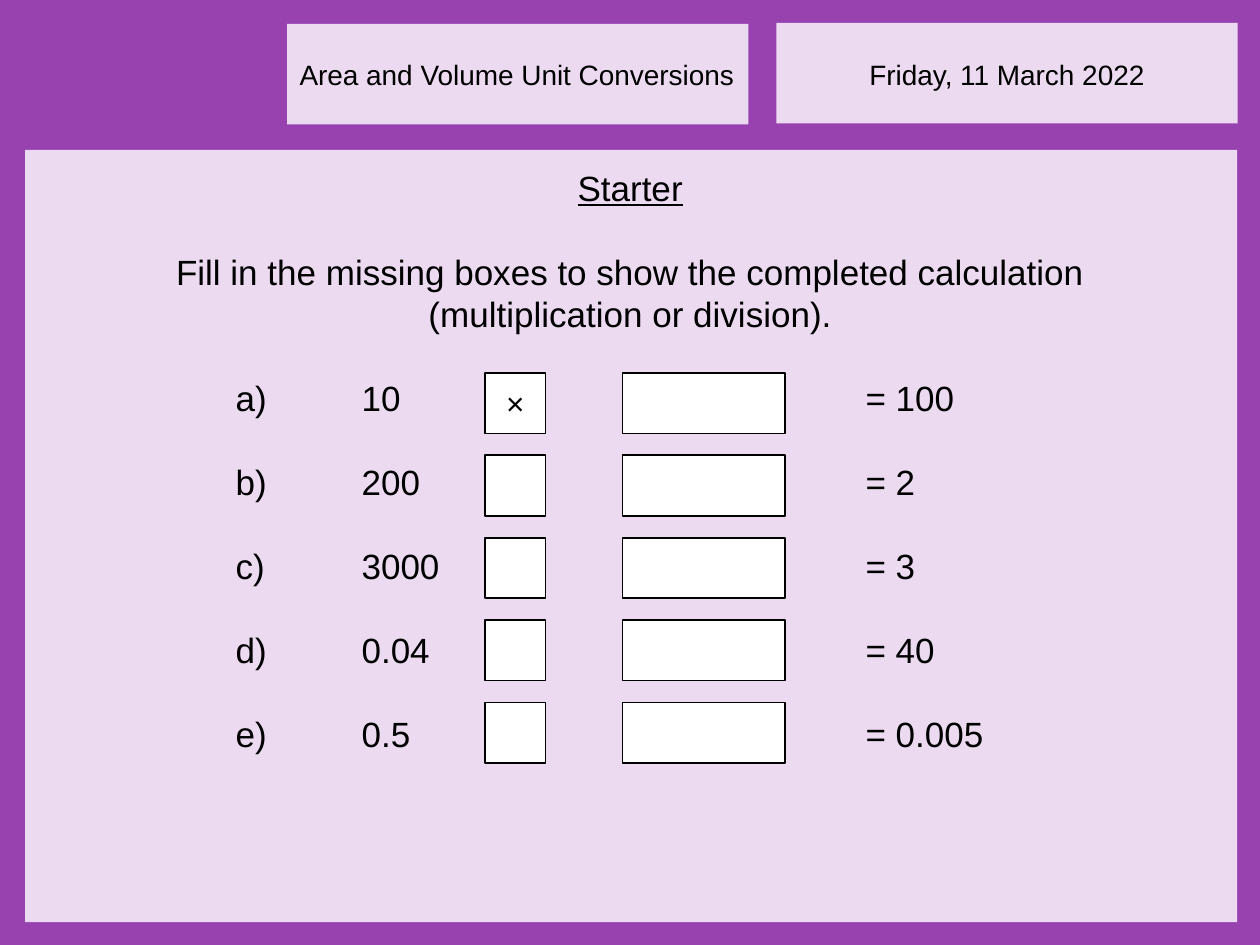
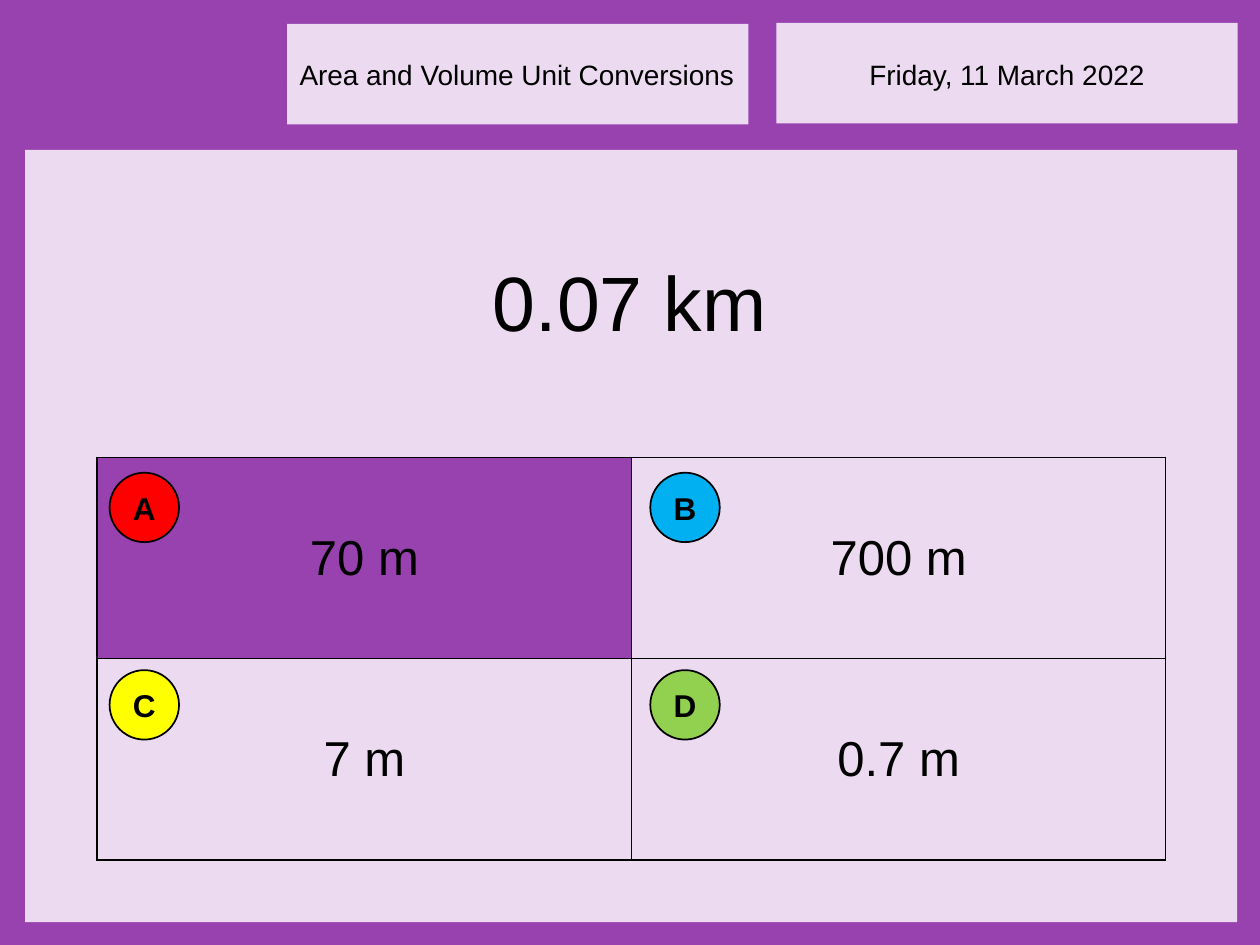
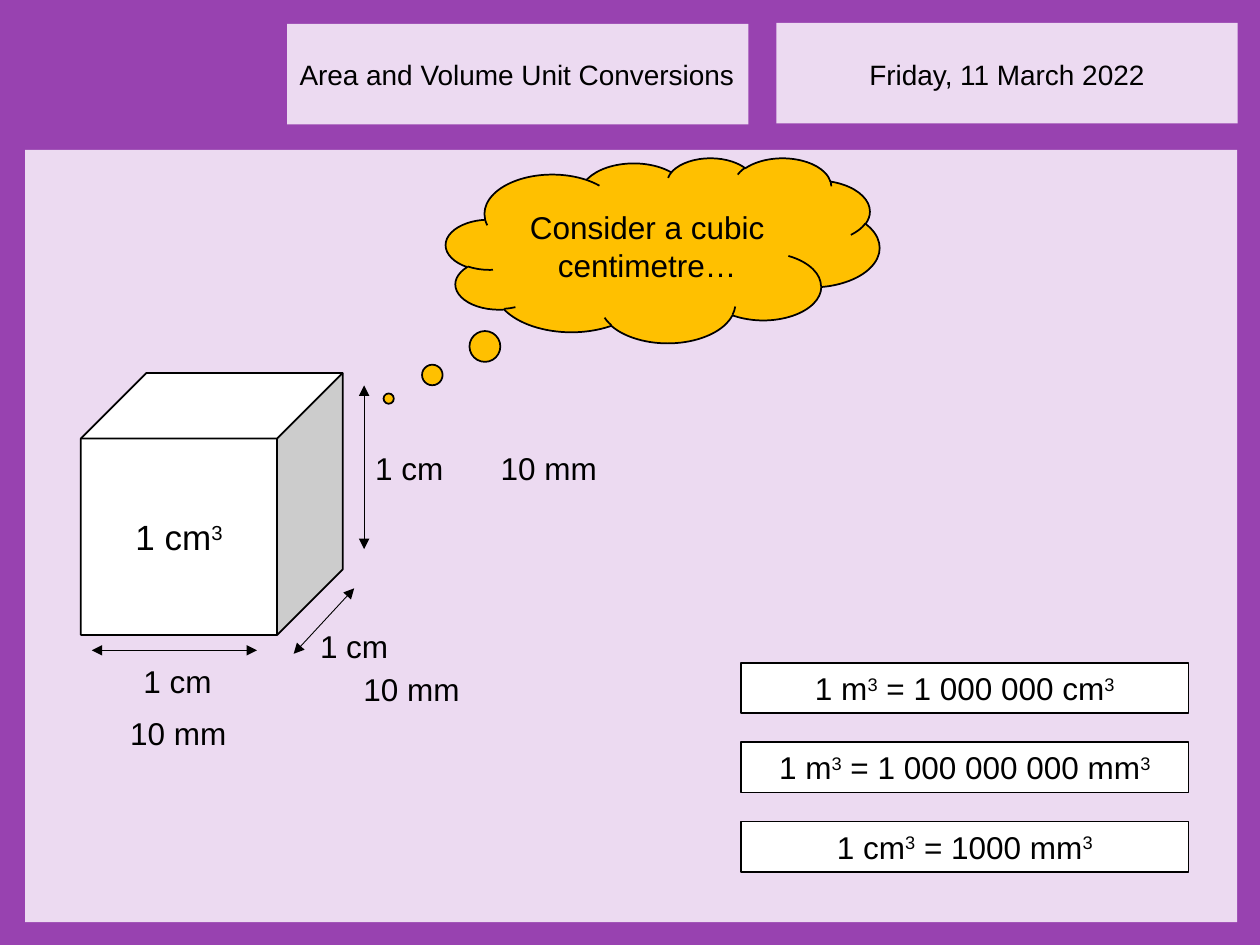
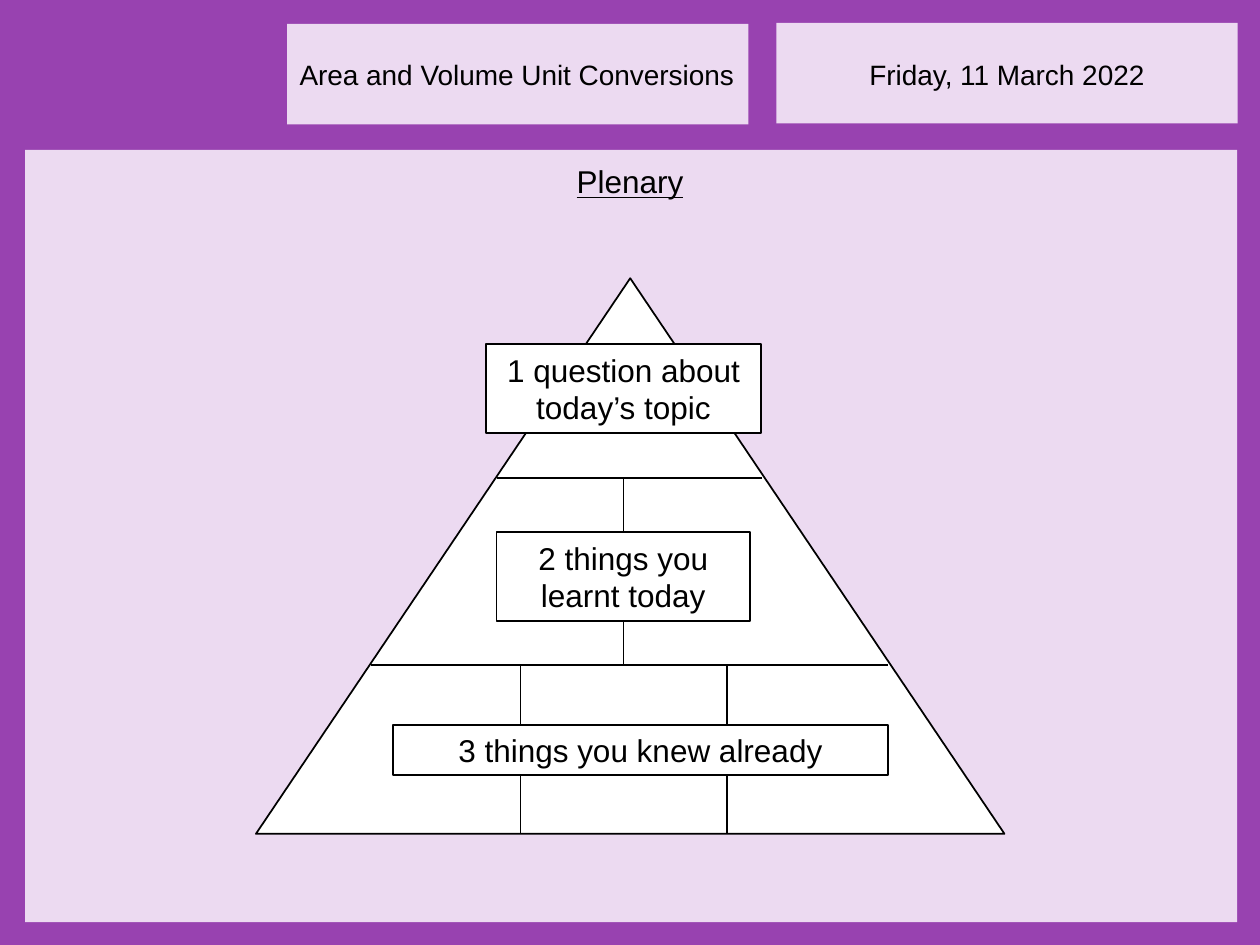
from lxml import etree
from pptx import Presentation
from pptx.dml.color import RGBColor
from pptx.enum.shapes import MSO_CONNECTOR, MSO_SHAPE
from pptx.enum.text import MSO_ANCHOR, PP_ALIGN
from pptx.oxml.ns import qn
from pptx.util import Cm, Pt

RECT, OVAL, CUBE = MSO_SHAPE.RECTANGLE, MSO_SHAPE.OVAL, MSO_SHAPE.CUBE
CLOUD, TRIANGLE = MSO_SHAPE.CLOUD_CALLOUT, MSO_SHAPE.ISOSCELES_TRIANGLE
STRAIGHT = MSO_CONNECTOR.STRAIGHT
MIDDLE = MSO_ANCHOR.MIDDLE
LEFT, CENTER = PP_ALIGN.LEFT, PP_ALIGN.CENTER

PURPLE = RGBColor(0x98, 0x42, 0xB0)
LILAC = RGBColor(0xEC, 0xDA, 0xF1)
BLACK = RGBColor(0x00, 0x00, 0x00)
WHITE = RGBColor(0xFF, 0xFF, 0xFF)
RED = RGBColor(0xFF, 0x00, 0x00)
BLUE = RGBColor(0x00, 0xB0, 0xF0)
YELLOW = RGBColor(0xFF, 0xFF, 0x00)
GREEN = RGBColor(0x92, 0xD0, 0x50)
AMBER = RGBColor(0xFF, 0xC0, 0x00)
FONT = "Arial"


def write(p, text, size=18, bold=False, underline=False, align=CENTER, before=0):
    """Fill a paragraph; the character after each ^ is superscript."""
    p.alignment = align
    if before:
        p.space_before = Pt(before)
    first, *rest = text.split("^")
    pieces = [(first, False)]
    for part in rest:
        pieces += [(part[0], True), (part[1:], False)]
    for piece, raised in pieces:
        if not piece:
            continue
        r = p.add_run()
        r.text = piece
        r.font.name, r.font.size = FONT, Pt(size)
        r.font.bold, r.font.underline = bold, underline
        r.font.color.rgb = BLACK
        if raised:
            r._r.get_or_add_rPr().set("baseline", "30000")


def add_box(shapes, x, y, w, h, text="", kind=None, fill=WHITE, outline=True, **fmt):
    """Add a preset shape, or a plain text box when no kind is given; lengths in cm."""
    place = Cm(x), Cm(y), Cm(w), Cm(h)
    if kind is None:
        sp = shapes.add_textbox(*place)
    else:
        sp = shapes.add_shape(kind, *place)
        sp.shadow.inherit = False
        sp.fill.solid()
        sp.fill.fore_color.rgb = fill
        if outline:
            sp.line.color.rgb = BLACK
            sp.line.width = Pt(1)
        else:
            sp.line.fill.background()
        sp.text_frame.vertical_anchor = MIDDLE
    sp.text_frame.word_wrap = True
    if text:
        write(sp.text_frame.paragraphs[0], text, **fmt)
    return sp


prs = Presentation()
prs.slide_width, prs.slide_height = Cm(25.4), Cm(19.05)

# Frame shared by every slide
slides = []
for _ in range(4):
    s = prs.slides.add_slide(prs.slide_layouts[6])
    for x, y, w, h, fill in [
        (0, 0, 25.4, 19.05, PURPLE),
        (15.65, 0.46, 9.3, 2.03, LILAC),
        (5.79, 0.48, 9.3, 2.03, LILAC),
        (0.51, 3.02, 24.43, 15.57, LILAC),
    ]:
        add_box(s.shapes, x, y, w, h, kind=RECT, fill=fill, outline=False)
    add_box(s.shapes, 15.65, 1.04, 9.3, 0.94, "Friday, 11 March 2022", size=16)
    add_box(s.shapes, 5.77, 1.04, 9.3, 0.94, "Area and Volume Unit Conversions", size=16)
    slides.append(s)
starter, quiz, cubic, plenary = [s.shapes for s in slides]

# Starter: missing boxes
tf = add_box(starter, 3.23, 3.23, 18.95, 12.22, "Starter", size=20, underline=True).text_frame
write(tf.add_paragraph(), "Fill in the missing boxes to show the completed calculation",
      size=20, before=24)
write(tf.add_paragraph(), "(multiplication or division).", size=20)
sums = [("a", "10", "100"), ("b", "200", "2"), ("c", "3000", "3"),
        ("d", "0.04", "40"), ("e", "0.5", "0.005")]
for i, (letter, number, answer) in enumerate(sums):
    p = tf.add_paragraph()
    tabs = etree.SubElement(p._p.get_or_add_pPr(), qn("a:tabLst"))
    for stop in (1.27, 3.81, 13.97):
        etree.SubElement(tabs, qn("a:tab"), pos=str(Cm(stop)), algn="l")
    write(p, f"\t{letter})\t{number}\t= {answer}", size=20, align=LEFT, before=24)
    y = 7.52 + 1.66 * i
    add_box(starter, 9.78, y, 1.22, 1.22, "×" if i == 0 else "", kind=RECT)
    add_box(starter, 12.55, y, 3.28, 1.22, kind=RECT)

# Quiz: four answers, the right one filled
tbl = quiz.add_table(2, 2, Cm(1.96), Cm(9.22), Cm(21.54), Cm(8.12)).table
tbl.first_row = tbl.horz_banding = False
add_box(quiz, 3.2, 5, 19, 2.13, "0.07 km", size=44)
answers = [("A", "70 m", RED), ("B", "700 m", BLUE), ("C", "7 m", YELLOW), ("D", "0.7 m", GREEN)]
for i, (letter, answer, color) in enumerate(answers):
    row, col = divmod(i, 2)
    cell = tbl.cell(row, col)
    cell.vertical_anchor = MIDDLE
    write(cell.text_frame.paragraphs[0], answer, size=28)
    for side in ("lnL", "lnR", "lnT", "lnB"):
        ln = etree.SubElement(cell._tc.get_or_add_tcPr(), qn(f"a:{side}"), w=str(Pt(1)))
        solid = etree.SubElement(ln, qn("a:solidFill"))
        etree.SubElement(solid, qn("a:srgbClr"), val=str(BLACK))
    if letter == "A":
        cell.fill.solid()
        cell.fill.fore_color.rgb = PURPLE
    else:
        cell.fill.background()
    add_box(quiz, 2.21 + 10.9 * col, 9.53 + 3.98 * row, 1.4, 1.4, letter,
            kind=OVAL, fill=color, bold=True)

# Cubic centimetre
add_box(cubic, 1.63, 7.52, 5.28, 5.28, "1 cm^3", kind=CUBE, size=20)
for x, y in [(2.16, 13.23), (5.72, 12.52), (6.83, 8.92)]:
    add_box(cubic, x, y, 2.84, 1.02, "1 cm")
for x, y in [(1.83, 14.27), (6.53, 13.39), (9.3, 8.92)]:
    add_box(cubic, x, y, 3.53, 1.02, "10 mm")
facts = ["1 m^3 = 1 000 000 cm^3", "1 m^3 = 1 000 000 000 mm^3", "1 cm^3 = 1000 mm^3"]
for i, fact in enumerate(facts):
    add_box(cubic, 14.94, 13.36 + 1.6 * i, 9.02, 1.02, fact, kind=RECT)
cloud = add_box(cubic, 8.99, 3.18, 8.74, 3.73, "Consider a cubic centimetre…", kind=CLOUD, fill=AMBER)
cloud.adjustments[0], cloud.adjustments[1] = -0.632, 0.802

# Plenary pyramid
pyramid = plenary.add_group_shape().shapes
add_box(pyramid, 5.16, 5.61, 15.09, 11.2, kind=TRIANGLE)

# Cube dimension arrows and pyramid dividers
dimensions = [(1.85, 13.11, 5.18, 13.11), (7.14, 11.86, 5.92, 13.18), (7.34, 7.77, 7.34, 11.07)]
dividers = [(7.47, 13.41, 17.91, 13.41), (10.01, 9.63, 15.37, 9.63), (12.57, 9.63, 12.57, 13.41),
            (10.49, 13.41, 10.49, 16.81), (14.66, 13.41, 14.66, 16.81)]
for shapes, ends, weight, arrows in [(cubic, dimensions, 0.5, ("headEnd", "tailEnd")),
                                     (pyramid, dividers, 1, ())]:
    for end in ends:
        line = shapes.add_connector(STRAIGHT, *[Cm(v) for v in end])
        line.line.color.rgb = BLACK
        line.line.width = Pt(weight)
        for arrow in arrows:
            etree.SubElement(line.line._get_or_add_ln(), qn(f"a:{arrow}"), type="triangle")
        etree.SubElement(line._element.spPr, qn("a:effectLst"))

for x, y, w, h, text in [
    (7.92, 14.61, 9.98, 1.02, "3 things you knew already"),
    (10.01, 10.72, 5.11, 1.8, "2 things you learnt today"),
    (9.8, 6.93, 5.54, 1.8, "1 question about today’s topic"),
]:
    add_box(pyramid, x, y, w, h, text, kind=RECT)
add_box(plenary, 0.66, 3.15, 24.08, 1.02, "Plenary", underline=True)

prs.save("out.pptx")
